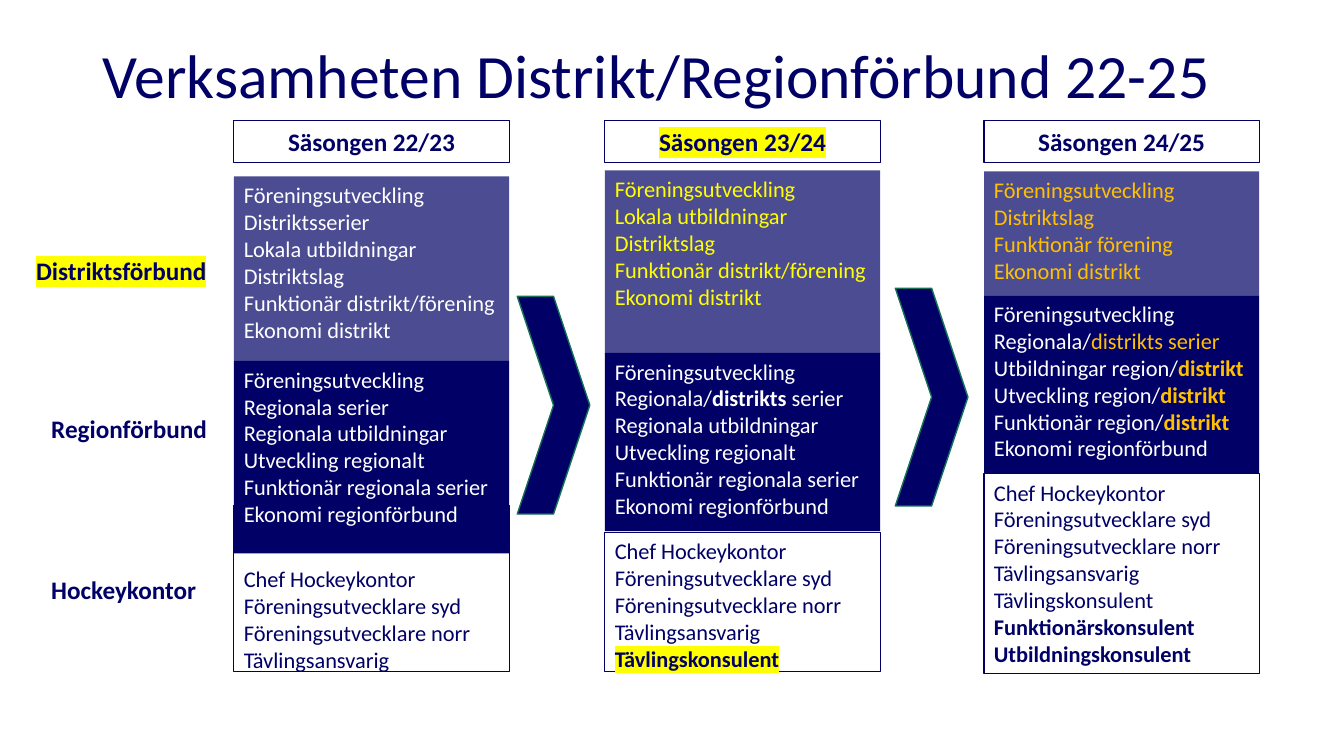
from dataclasses import dataclass, field
from typing import Any, Optional

import pptx
import pptx.dml.color
import pptx.enum.shapes
import pptx.enum.text
import pptx.oxml
import pptx.oxml.ns
import pptx.util
from lxml import etree

Inches = pptx.util.Inches
Align = pptx.enum.text.PP_ALIGN
Anchor = pptx.enum.text.MSO_ANCHOR
Kind = pptx.enum.shapes.MSO_SHAPE


@dataclass(frozen=True)
class Theme:
    font: str = "Calibri"
    navy: str = "000066"
    white: str = "FFFFFF"
    yellow: str = "FFFF00"
    gold: str = "FFC000"
    green: str = "157259"
    title: float = 44
    head: float = 18
    body: float = 16


THEME = Theme()


@dataclass(frozen=True)
class Look:
    color: str
    bold: bool = False
    mark: Optional[str] = None


NAVY = Look(THEME.navy)
BOLD = Look(THEME.navy, True)
MARK = Look(THEME.navy, True, THEME.yellow)
WHITE = Look(THEME.white)
STRONG = Look(THEME.white, True)
YELLOW = Look(THEME.yellow)
GOLD = Look(THEME.gold)
RICH = Look(THEME.gold, True)


@dataclass(frozen=True)
class Bit:
    text: str
    look: Look


@dataclass(frozen=True)
class Box:
    left: float
    top: float
    width: float
    height: float
    lines: list = field(default_factory=list)
    look: Look = WHITE
    fill: Optional[str] = None
    alpha: int = 100
    line: Optional[str] = None
    weight: float = 0.75
    size: float = THEME.body
    align: Any = Align.LEFT
    anchor: Any = Anchor.TOP
    inset: float = 0.05
    kind: Any = Kind.RECTANGLE


@dataclass(frozen=True)
class Season:
    left: float
    name: Bit
    tops: tuple[float, float, float]
    ends: tuple[float, float, float]
    tint: Look
    local: list
    region: list
    office: list
    inset: float = 0.05


def rgb(code: str) -> pptx.dml.color.RGBColor:
    return pptx.dml.color.RGBColor.from_string(code)


def tag(parent: etree._Element, name: str, val: str) -> etree._Element:
    node = etree.SubElement(parent, pptx.oxml.ns.qn(name))
    node.set("val", val)
    return node


def style(run: Any, look: Look, size: float) -> None:
    font = run.font
    font.name, font.size, font.bold = THEME.font, pptx.util.Pt(size), look.bold
    font.color.rgb = rgb(look.color)
    if look.mark:
        props = run._r.get_or_add_rPr()
        mark = etree.SubElement(props, pptx.oxml.ns.qn("a:highlight"))
        tag(mark, "a:srgbClr", look.mark)
        props.find(pptx.oxml.ns.qn("a:solidFill")).addnext(mark)


def write(shape: Any, box: Box) -> None:
    frame = shape.text_frame
    frame.word_wrap = True
    frame.vertical_anchor = box.anchor
    frame.margin_top = Inches(box.inset)
    for index, line in enumerate(box.lines):
        para = frame.add_paragraph() if index else frame.paragraphs[0]
        para.alignment = box.align
        for part in line if isinstance(line, tuple) else (line,):
            bit = part if isinstance(part, Bit) else Bit(part, box.look)
            run = para.add_run()
            run.text = bit.text
            style(run, bit.look, box.size)


def draw(slide: Any, box: Box) -> None:
    area = [Inches(n) for n in (box.left, box.top, box.width, box.height)]
    if not box.fill and not box.line:
        write(slide.shapes.add_textbox(*area), box)
        return
    shape = slide.shapes.add_shape(box.kind, *area)
    shape.shadow.inherit = False
    if box.fill:
        shape.fill.solid()
        shape.fill.fore_color.rgb = rgb(box.fill)
        if box.alpha < 100:
            for node in shape._element.spPr.iter(pptx.oxml.ns.qn("a:srgbClr")):
                tag(node, "a:alpha", str(box.alpha * 1000))
    else:
        shape.fill.background()
    if box.line:
        shape.line.color.rgb = rgb(box.line)
        shape.line.width = pptx.util.Pt(box.weight)
    else:
        shape.line.fill.background()
    write(shape, box)


def stack(slide: Any, item: Season) -> None:
    wide, navy = 2.73, THEME.navy
    local, region, office = zip(item.tops, item.ends)
    draw(slide, Box(item.left, 1.2, wide, 0.41, [item.name], line=navy,
                    size=THEME.head, align=Align.CENTER))
    draw(slide, Box(item.left, office[0], wide, office[1] - office[0], item.office,
                    NAVY, line=navy, inset=item.inset))
    draw(slide, Box(item.left, region[0], wide, region[1] - region[0], item.region,
                    WHITE, navy))
    draw(slide, Box(item.left, local[0], wide, local[1] - local[0], item.local,
                    item.tint, navy, 70))


CLUB, TEAM = "Föreningsutveckling", "Distriktslag"
COURSE, BOTH = "Lokala utbildningar", "Funktionär distrikt/förening"
MONEY, BUDGET = "Ekonomi distrikt", "Ekonomi regionförbund"
REGION = ["Regionala utbildningar", "Utveckling regionalt",
          "Funktionär regionala serier", BUDGET]
STAFF = ["Chef Hockeykontor", "Föreningsutvecklare syd",
         "Föreningsutvecklare norr", "Tävlingsansvarig"]
AIDE = "Tävlingskonsulent"
SHARED = [(f"{name} region/", Bit("distrikt", RICH))
          for name in ("Utbildningar", "Utveckling", "Funktionär")]

SEASONS = [
    Season(2.32, Bit("Säsongen 22/23", BOLD), (1.75, 3.58, 5.02), (3.58, 5.49, 6.66),
           WHITE, [CLUB, "Distriktsserier", COURSE, TEAM, BOTH, MONEY],
           [CLUB, "Regionala serier", *REGION], STAFF, 0.59),
    Season(6, Bit("Säsongen 23/24", MARK), (1.69, 3.5, 5.28), (3.51, 5.27, 6.66),
           YELLOW, [CLUB, COURSE, TEAM, BOTH, MONEY],
           [CLUB, ("Regionala/", Bit("distrikts", STRONG), " serier"), *REGION],
           [*STAFF, Bit(AIDE, MARK)]),
    Season(9.76, Bit("Säsongen 24/25", BOLD), (1.7, 2.93, 4.7), (2.93, 4.7, 6.68),
           GOLD, [CLUB, TEAM, "Funktionär förening", MONEY],
           [CLUB, ("Regionala/", Bit("distrikts serier", GOLD)), *SHARED, BUDGET],
           [*STAFF, AIDE, Bit("Funktionärskonsulent", BOLD),
            Bit("Utbildningskonsulent", BOLD)]),
]
LABELS = [
    Box(0.26, 2.48, 1.93, 0.4, ["Distriktsförbund"], MARK, size=THEME.head),
    Box(0.41, 4.05, 1.8, 0.42, ["Regionförbund"], BOLD, size=THEME.head),
    Box(0.41, 5.65, 1.8, 0.42, ["Hockeykontor"], BOLD, size=THEME.head),
]
ARROWS = [Box(left, top, 0.72, 2.16, fill=THEME.navy, line=THEME.green, weight=1,
              kind=Kind.CHEVRON) for left, top in ((5.13, 2.94), (8.88, 2.86))]
TITLE = Box(0.92, 0.3, 11.5, 0.87, ["Verksamheten Distrikt/Regionförbund 22-25"],
            NAVY, size=THEME.title, anchor=Anchor.MIDDLE)


def main() -> None:
    deck = pptx.Presentation()
    deck.slide_width, deck.slide_height = Inches(13.33), Inches(7.5)
    slide = deck.slides.add_slide(deck.slide_layouts[6])
    for box in [TITLE, *LABELS, *ARROWS]:
        draw(slide, box)
    for item in SEASONS:
        stack(slide, item)
    deck.save("out.pptx")


if __name__ == "__main__":
    main()
